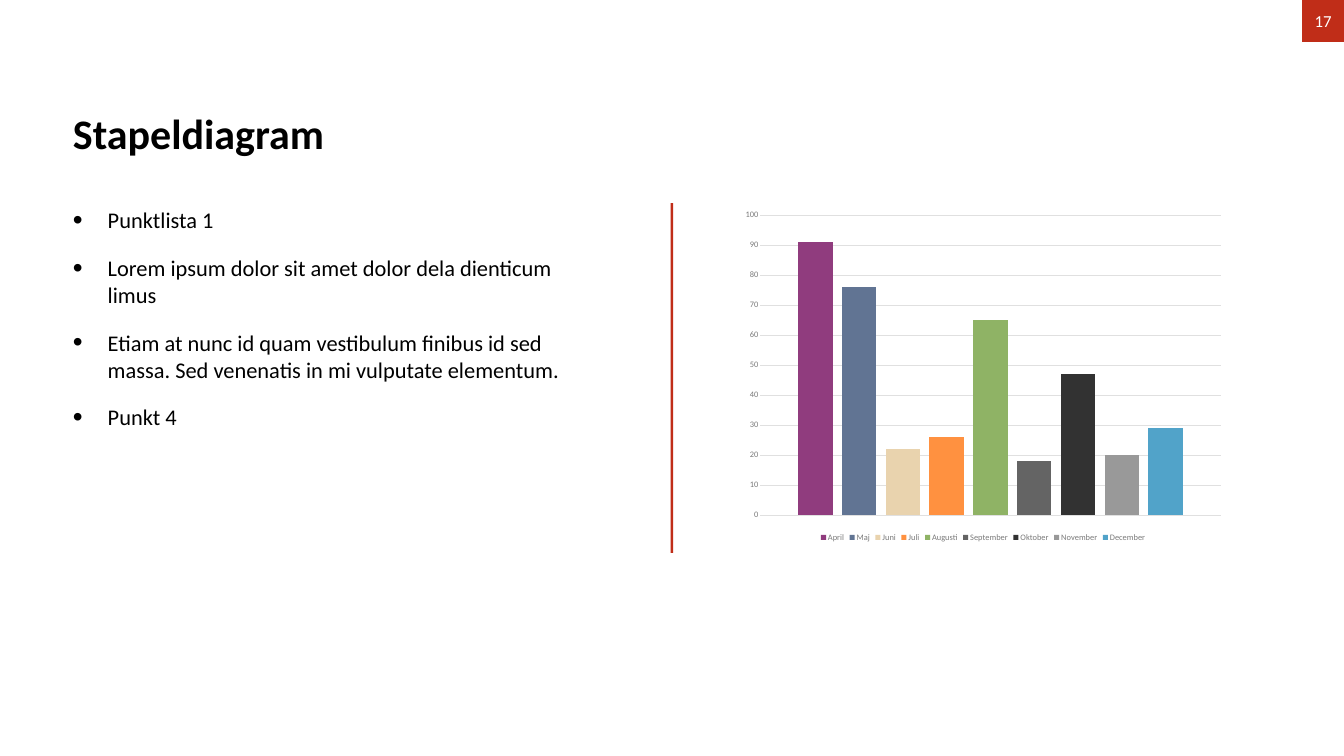
from pptx import Presentation
from pptx.chart.data import CategoryChartData
from pptx.dml.color import RGBColor
from pptx.enum.chart import XL_CHART_TYPE, XL_LEGEND_POSITION, XL_TICK_MARK
from pptx.enum.shapes import MSO_SHAPE
from pptx.enum.text import MSO_ANCHOR, PP_ALIGN
from pptx.oxml.ns import qn
from pptx.util import Cm, Pt
from lxml.etree import SubElement

# Content
TITLE = "Stapeldiagram"
PAGE_NUMBER = "17"
POINTS = [
    "Punktlista 1",
    "Lorem ipsum dolor sit amet dolor dela dienticum limus",
    "Etiam at nunc id quam vestibulum finibus id sed massa. "
    "Sed venenatis in mi vulputate elementum.",
    "Punkt 4",
]
MONTHS = [
    ("April", 91, "903C7E"),
    ("Maj", 76, "617493"),
    ("Juni", 22, "E9D3AE"),
    ("Juli", 26, "FF9140"),
    ("Augusti", 65, "8FB365"),
    ("September", 18, "646464"),
    ("Oktober", 47, "323232"),
    ("November", 20, "999999"),
    ("December", 29, "51A3C9"),
]

# Style and layout, in centimetres
FONT = "Calibri"
RED, BLACK, WHITE, GREY, GRID = "C02D18", "000000", "FFFFFF", "7A7A7A", "E0E0E0"
SLIDE_W, SLIDE_H = 67.74, 38.1
MARGIN, BODY_TOP, BODY_H = 3.53, 10.24, 17.2
BADGE = 2.11
DIVIDER_W = 0.13
INSET = 0.15
INDENT = 1.75


def color(hex_code):
    return RGBColor.from_string(hex_code)


def style_font(font, size, hex_code, bold=False):
    font.name, font.size, font.bold = FONT, Pt(size), bold
    font.color.rgb = color(hex_code)


def add_bullet(paragraph):
    props = paragraph._p.get_or_add_pPr()
    props.set("marL", str(Cm(INDENT)))
    props.set("indent", str(-Cm(INDENT)))
    SubElement(props, qn("a:buSzPct"), val="125000")
    SubElement(props, qn("a:buFont"), typeface="Arial")
    SubElement(props, qn("a:buChar"), char="•")


def write(shape, *texts, size, hex_code=BLACK, bold=False, align=PP_ALIGN.LEFT,
          anchor=MSO_ANCHOR.TOP, bullets=False, gap=0):
    frame = shape.text_frame
    frame.word_wrap = True
    frame.vertical_anchor = anchor
    frame.margin_left = frame.margin_right = Cm(INSET)
    frame.margin_top = frame.margin_bottom = Cm(INSET)
    for i, text in enumerate(texts):
        paragraph = frame.add_paragraph() if i else frame.paragraphs[0]
        paragraph.alignment = align
        paragraph.space_before = Pt(gap if i else 0)
        if bullets:
            add_bullet(paragraph)
        run = paragraph.add_run()
        run.text = text
        style_font(run.font, size, hex_code, bold)


def add_block(slide, left, top, width, height):
    block = slide.shapes.add_shape(
        MSO_SHAPE.RECTANGLE, Cm(left), Cm(top), Cm(width), Cm(height))
    block.shadow.inherit = False
    block.fill.solid()
    block.fill.fore_color.rgb = color(RED)
    block.line.fill.background()
    return block


def add_month_chart(slide, left, top, width, height):
    data = CategoryChartData()
    data.categories = ["1"]
    for month, value, _ in MONTHS:
        data.add_series(month, [value])
    chart = slide.shapes.add_chart(
        XL_CHART_TYPE.COLUMN_CLUSTERED,
        Cm(left), Cm(top), Cm(width), Cm(height), data).chart
    style_font(chart.font, 10, "323232")
    chart.has_title = False

    # Columns
    plot = chart.plots[0]
    plot.gap_width, plot.overlap = 219, -27
    plot.vary_by_categories = False
    for series, (_, _, fill) in zip(plot.series, MONTHS):
        series.invert_if_negative = False
        series.format.fill.solid()
        series.format.fill.fore_color.rgb = color(fill)

    # Axes
    chart.category_axis.visible = False
    values = chart.value_axis
    values.minimum_scale, values.maximum_scale, values.major_unit = 0, 100, 10
    values.major_tick_mark = values.minor_tick_mark = XL_TICK_MARK.NONE
    values.format.line.fill.background()
    style_font(values.tick_labels.font, 12, GREY)
    grid = values.major_gridlines.format.line
    grid.width = Pt(0.75)
    grid.color.rgb = color(GRID)

    # Legend
    chart.has_legend = True
    chart.legend.position = XL_LEGEND_POSITION.BOTTOM
    chart.legend.include_in_layout = False
    style_font(chart.legend.font, 12, GREY)


def main():
    deck = Presentation()
    deck.slide_width, deck.slide_height = Cm(SLIDE_W), Cm(SLIDE_H)
    slide = deck.slides.add_slide(deck.slide_layouts[6])

    # Divider in the middle of the slide
    add_block(slide, (SLIDE_W - DIVIDER_W) / 2, BODY_TOP, DIVIDER_W, 17.63)

    # Heading
    heading = slide.shapes.add_textbox(Cm(MARGIN), Cm(1.75), Cm(58.34), Cm(6.35))
    write(heading, TITLE, size=60, bold=True, anchor=MSO_ANCHOR.BOTTOM)

    # Page number in the top right corner
    page_badge = add_block(slide, SLIDE_W - BADGE, 0, BADGE, BADGE)
    write(page_badge, PAGE_NUMBER, size=24, hex_code=WHITE,
          align=PP_ALIGN.CENTER, anchor=MSO_ANCHOR.MIDDLE)

    # Bullet list and chart
    point_list = slide.shapes.add_textbox(
        Cm(MARGIN), Cm(BODY_TOP), Cm(27.1), Cm(BODY_H))
    write(point_list, *POINTS, size=32, bullets=True, gap=30)
    add_month_chart(slide, 37.08, BODY_TOP, 24.94, BODY_H)

    deck.save("out.pptx")


if __name__ == "__main__":
    main()
